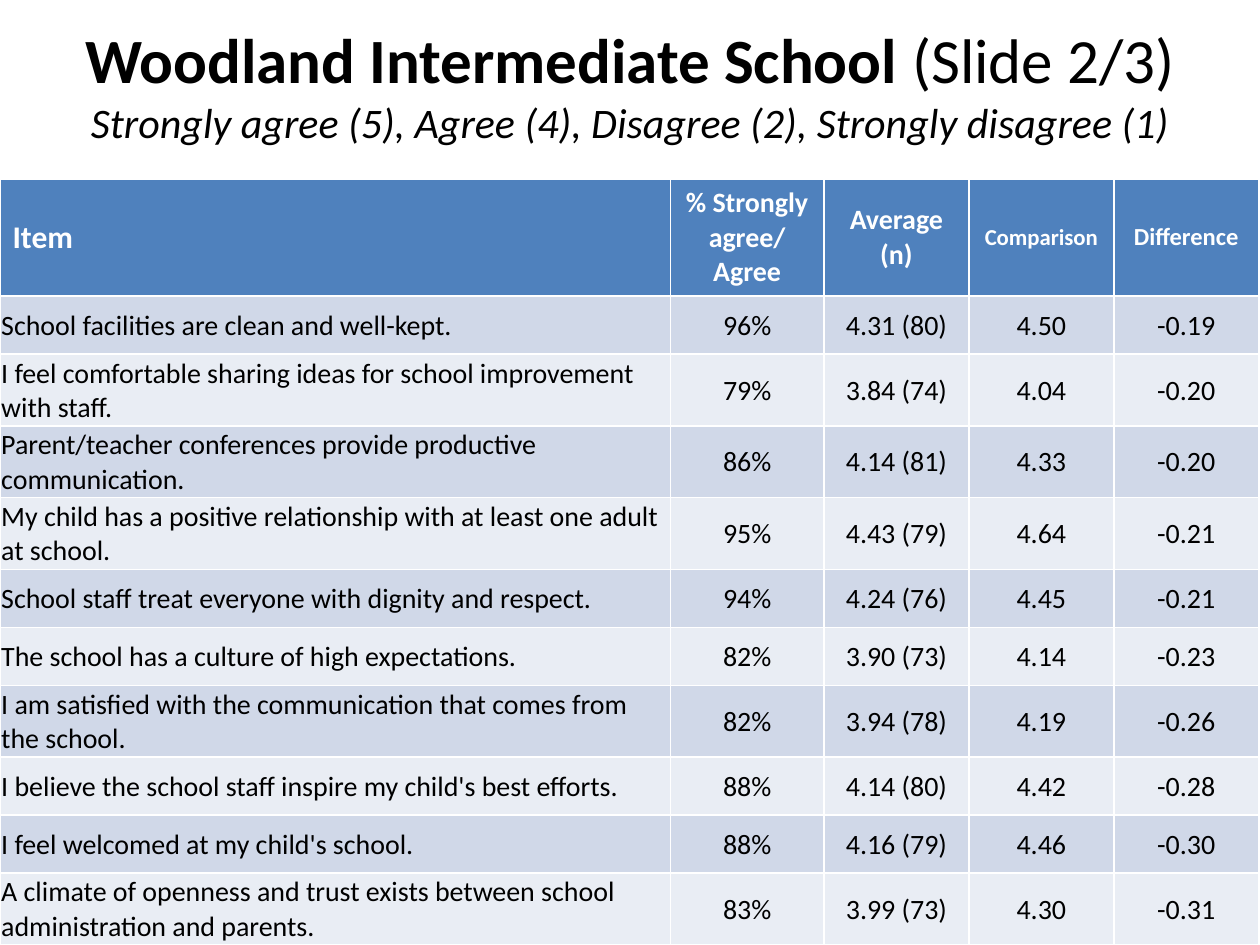
from pptx import Presentation
from pptx.dml.color import RGBColor
from pptx.enum.text import MSO_ANCHOR, MSO_AUTO_SIZE, PP_ALIGN
from pptx.util import Inches, Pt

COLORS = {"header": "4F81BD", "odd": "D0D8E8", "even": "E9EDF4",
          "text": "000000", "header_text": "FFFFFF"}
FONT = "Calibri"
SCHOOL = "Woodland Intermediate School "
PART = "(Slide 2/3)"
SCALE = "Strongly agree (5), Agree (4), Disagree (2), Strongly disagree (1)"
HEADERS = [("Item", 18), ("% Strongly agree/ Agree", 16), ("Average (n)", 16),
           ("Comparison", 13), ("Difference", 14)]
ITEMS = [
    ("School facilities are clean and well-kept.", "96%", "4.31 (80)", "4.50", "-0.19"),
    ("I feel comfortable sharing ideas for school improvement with staff.",
     "79%", "3.84 (74)", "4.04", "-0.20"),
    ("Parent/teacher conferences provide productive communication.",
     "86%", "4.14 (81)", "4.33", "-0.20"),
    ("My child has a positive relationship with at least one adult at school.",
     "95%", "4.43 (79)", "4.64", "-0.21"),
    ("School staff treat everyone with dignity and respect.",
     "94%", "4.24 (76)", "4.45", "-0.21"),
    ("The school has a culture of high expectations.", "82%", "3.90 (73)", "4.14", "-0.23"),
    ("I am satisfied with the communication that comes from the school.",
     "82%", "3.94 (78)", "4.19", "-0.26"),
    ("I believe the school staff inspire my child's best efforts.",
     "88%", "4.14 (80)", "4.42", "-0.28"),
    ("I feel welcomed at my child's school.", "88%", "4.16 (79)", "4.46", "-0.30"),
    ("A climate of openness and trust exists between school administration and parents.",
     "83%", "3.99 (73)", "4.30", "-0.31"),
]
WIDTH, HEIGHT = 10, 7.5
TITLE_HEIGHT, TABLE_TOP = 1.33, 1.42
COLUMN_WIDTHS = [5.32, 1.22, 1.15, 1.15, 1.15]
HEADER_HEIGHT, ONE_LINE, TWO_LINES = 0.93, 0.46, 0.57
LINE_CHARACTERS = 59


def style_run(span, size, color, bold=False, italic=False):
    font = span.font
    font.name, font.size = FONT, Pt(size)
    font.bold, font.italic = bold, italic
    font.color.rgb = RGBColor.from_string(COLORS[color])


def fill_cell(cell, text, size, fill, color, column, bold=False):
    cell.text = text
    cell.vertical_anchor = MSO_ANCHOR.MIDDLE
    cell.fill.solid()
    cell.fill.fore_color.rgb = RGBColor.from_string(COLORS[fill])
    para = cell.text_frame.paragraphs[0]
    para.alignment = PP_ALIGN.CENTER if column else PP_ALIGN.LEFT
    style_run(para.runs[0], size, color, bold)


def add_title(page):
    title = page.shapes.title
    title.left, title.top = 0, 0
    title.width, title.height = Inches(WIDTH), Inches(TITLE_HEIGHT)
    frame = title.text_frame
    frame.word_wrap, frame.auto_size = True, MSO_AUTO_SIZE.NONE
    frame.vertical_anchor = MSO_ANCHOR.MIDDLE
    para = frame.paragraphs[0]
    para.alignment = PP_ALIGN.CENTER
    for text, size, bold, italic in [(SCHOOL, 36, True, False), (PART, 36, False, False),
                                     (SCALE, 24, False, True)]:
        if text == SCALE:
            para.add_line_break()
        span = para.add_run()
        span.text = text
        style_run(span, size, "text", bold, italic)


def add_survey_table(page):
    table = page.shapes.add_table(
        len(ITEMS) + 1, len(HEADERS), 0, Inches(TABLE_TOP),
        Inches(WIDTH), Inches(HEIGHT - TABLE_TOP)).table
    for column, width in zip(table.columns, COLUMN_WIDTHS):
        column.width = Inches(width)
    table.rows[0].height = Inches(HEADER_HEIGHT)
    for column, (label, size) in enumerate(HEADERS):
        fill_cell(table.cell(0, column), label, size, "header", "header_text", column, True)
    for row, item in enumerate(ITEMS, 1):
        wraps = len(item[0]) > LINE_CHARACTERS
        table.rows[row].height = Inches(TWO_LINES if wraps else ONE_LINE)
        for column, text in enumerate(item):
            cell = table.cell(row, column)
            fill_cell(cell, text, 16, "odd" if row % 2 else "even", "text", column)
            cell.margin_left = cell.margin_right = cell.margin_top = Inches(0.01)
            cell.margin_bottom = 0


def main():
    deck = Presentation()
    deck.slide_width, deck.slide_height = Inches(WIDTH), Inches(HEIGHT)
    page = deck.slides.add_slide(deck.slide_layouts[5])
    add_title(page)
    add_survey_table(page)
    deck.save("out.pptx")


if __name__ == "__main__":
    main()
